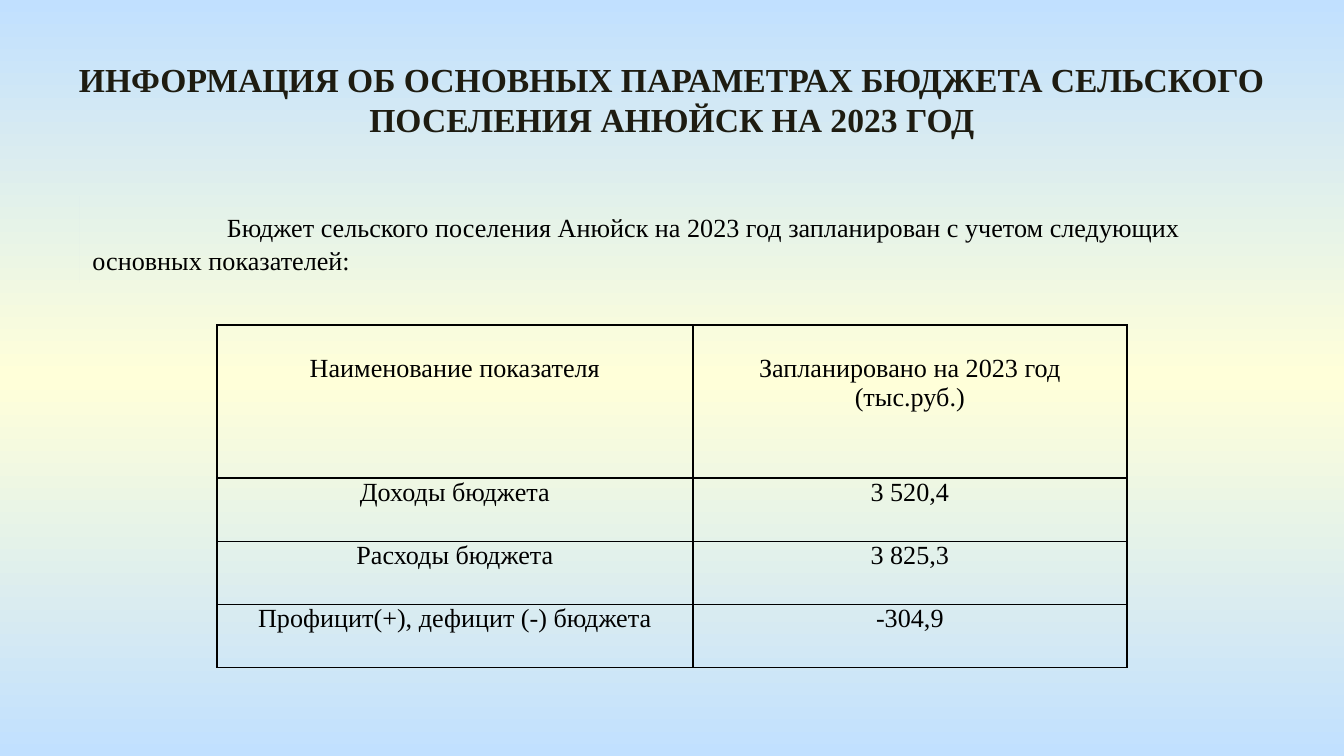
from copy import deepcopy
from dataclasses import dataclass

from lxml.etree import SubElement
from pptx import Presentation
from pptx.dml.color import RGBColor as RGB
from pptx.enum.shapes import MSO_SHAPE as SHAPE
from pptx.enum.text import MSO_ANCHOR as ANCHOR, MSO_AUTO_SIZE as AUTO, PP_ALIGN as ALIGN
from pptx.oxml.ns import qn
from pptx.util import Inches, Pt


@dataclass(frozen=True)
class Theme:
    font: str = "Times New Roman"
    sky: str = "C1E0FF"
    cream: str = "FFFFD9"
    heading: str = "1E1C11"
    ink: str = "000000"
    title_size: int = 18
    text_size: int = 14
    border: int = 1


class Deck:
    def __init__(self, theme, width, ratio):
        self.theme = theme
        self.prs = Presentation()
        self.prs.slide_width = Inches(width)
        self.prs.slide_height = Inches(width * ratio)
        self.s = self.prs.slides.add_slide(self.prs.slide_layouts[5])

    def x(self, percent):
        return int(self.prs.slide_width * percent / 100)

    def y(self, percent):
        return int(self.prs.slide_height * percent / 100)

    def box(self, left, top, width, height):
        return self.x(left), self.y(top), self.x(width), self.y(height)

    def run(self, p, text, size, color, bold=False):
        r = p.add_run()
        r.text = text
        r.font.name, r.font.size, r.font.bold = self.theme.font, Pt(size), bold
        r.font.color.rgb = RGB.from_string(color)

    def background(self):
        fill = self.s.background.fill
        fill.gradient()
        fill.gradient_angle = 270
        for stop in fill.gradient_stops:
            stop.color.rgb = RGB.from_string(self.theme.sky)
        stops = self.s.element.find(".//" + qn("a:gsLst"))
        stops.insert(1, deepcopy(stops[0]))
        middle = fill.gradient_stops[1]
        middle.position = 0.5
        middle.color.rgb = RGB.from_string(self.theme.cream)

    def title(self, text, *place):
        sp = self.s.shapes.title
        sp.left, sp.top, sp.width, sp.height = self.box(*place)
        tf = sp.text_frame
        tf.word_wrap, tf.auto_size, tf.vertical_anchor = True, AUTO.NONE, ANCHOR.TOP
        p = tf.paragraphs[0]
        p.alignment = ALIGN.CENTER
        self.run(p, text, self.theme.title_size, self.theme.heading, True)

    def paragraph(self, text, indent, *place):
        sp = self.s.shapes.add_shape(SHAPE.RECTANGLE, *self.box(*place))
        sp.shadow.inherit = False
        sp.line.fill.background()
        sp.element.set("useBgFill", "1")
        tf = sp.text_frame
        tf.word_wrap, tf.vertical_anchor = True, ANCHOR.BOTTOM
        p = tf.paragraphs[0]
        p.alignment, p.line_spacing = ALIGN.LEFT, 1.05
        pPr = p._p.get_or_add_pPr()
        pPr.set("marL", "0")
        pPr.set("indent", str(self.x(indent)))
        self.run(p, text, self.theme.text_size, self.theme.ink)

    def borders(self, cell):
        tcPr = cell._tc.get_or_add_tcPr()
        for i, side in enumerate(("lnL", "lnR", "lnT", "lnB")):
            ln = SubElement(tcPr, qn("a:" + side), w=str(Pt(self.theme.border)))
            SubElement(SubElement(ln, qn("a:solidFill")), qn("a:srgbClr"), val=self.theme.ink)
            tcPr.insert(i, ln)

    def table(self, rows, left, top, widths, heights, header_gap):
        place = self.box(left, top, sum(widths), sum(heights))
        table = self.s.shapes.add_table(len(rows), len(widths), *place).table
        table.first_row = table.horz_banding = False
        for column, width in zip(table.columns, widths):
            column.width = self.x(width)
        for i, (values, height) in enumerate(zip(rows, heights)):
            table.rows[i].height = self.y(height)
            for j, text in enumerate(values):
                cell = table.cell(i, j)
                cell.fill.background()
                cell.margin_left = cell.margin_right = self.x(0.7)
                cell.margin_top = self.y(0 if i else header_gap)
                cell.margin_bottom = 0
                p = cell.text_frame.paragraphs[0]
                p.alignment = ALIGN.CENTER
                self.run(p, text, self.theme.text_size, self.theme.ink)
                self.borders(cell)


def main():
    deck = Deck(Theme(), 10, 9 / 16)
    deck.background()
    deck.paragraph(
        "Бюджет сельского поселения Анюйск на 2023 год запланирован с учетом следующих основных показателей:",
        10, 5.9, 25.95, 87.4, 11.4,
    )
    deck.title(
        "ИНФОРМАЦИЯ ОБ ОСНОВНЫХ ПАРАМЕТРАХ БЮДЖЕТА СЕЛЬСКОГО ПОСЕЛЕНИЯ АНЮЙСК НА 2023 ГОД",
        3.5, 6.9, 93, 12.6,
    )
    indicators = [
        ("Наименование показателя", "Запланировано на 2023 год (тыс.руб.)"),
        ("Доходы бюджета", "3 520,4"),
        ("Расходы бюджета", "3 825,3"),
        ("Профицит(+), дефицит (-) бюджета", "-304,9"),
    ]
    deck.table(indicators, 16.15, 43, (35.4, 32.3), (20.25, 8.36, 8.36, 8.36), 3.9)
    deck.prs.save("out.pptx")


if __name__ == "__main__":
    main()
